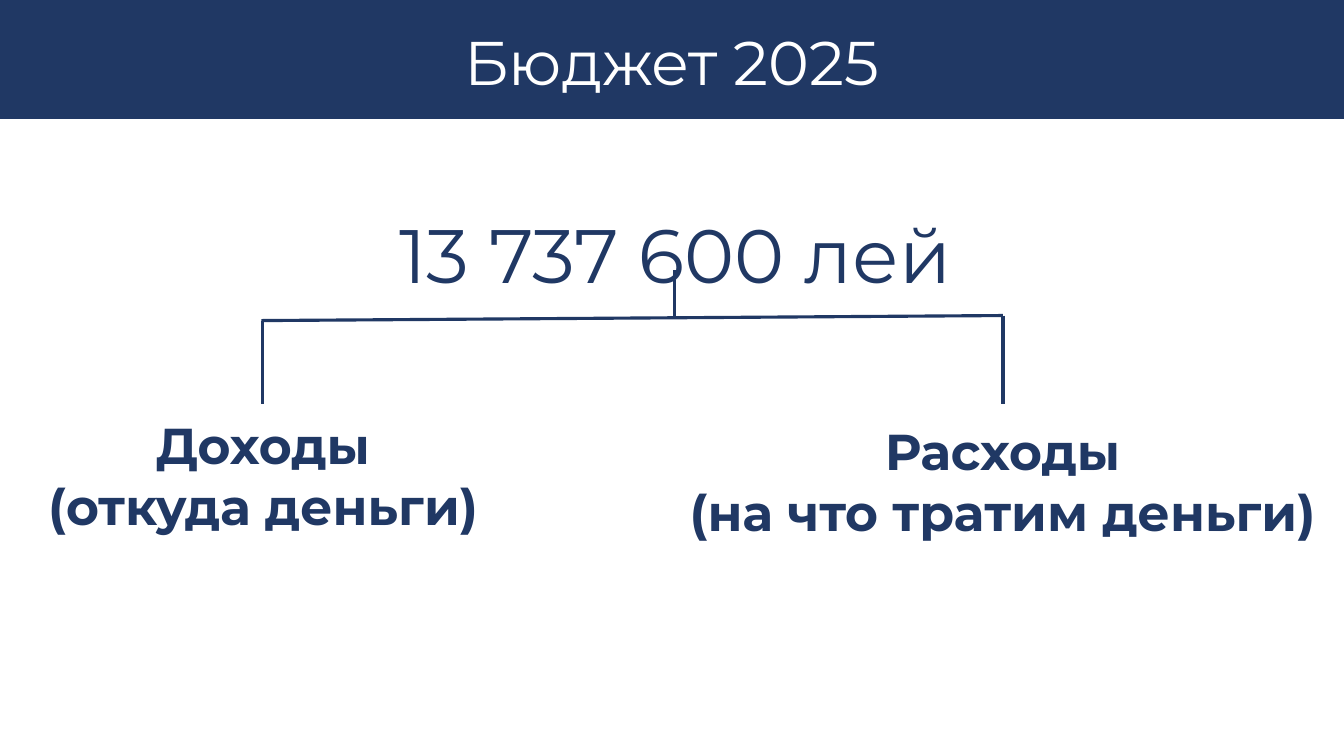
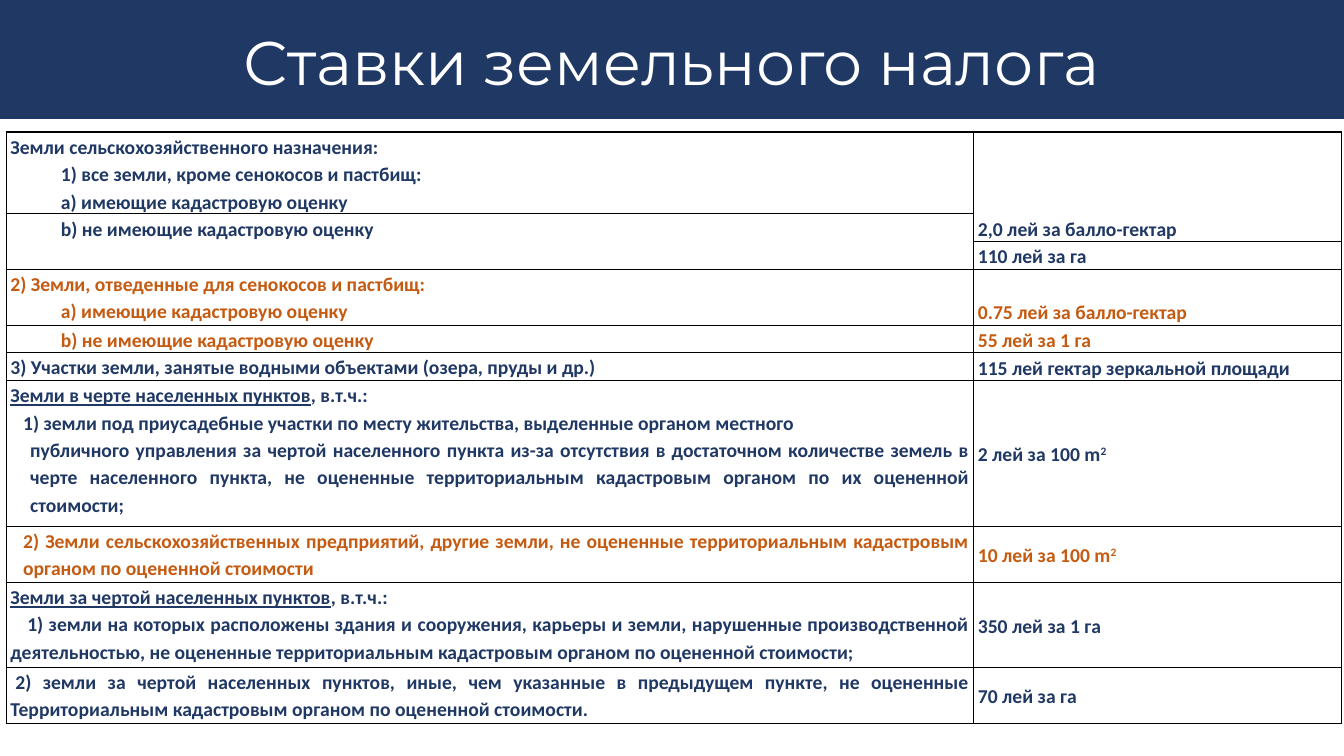
from dataclasses import dataclass
from lxml.etree import SubElement
from pptx import Presentation
from pptx.dml.color import RGBColor
from pptx.enum.shapes import MSO_CONNECTOR as Connector, MSO_SHAPE as Shape
from pptx.enum.text import MSO_ANCHOR as Anchor, PP_ALIGN as Align
from pptx.oxml import parse_xml
from pptx.oxml.ns import nsdecls, qn
from pptx.util import Pt


@dataclass(frozen=True)
class Theme:
    navy: RGBColor = RGBColor(0x20, 0x38, 0x64)
    orange: RGBColor = RGBColor(0xC5, 0x5A, 0x11)
    white: RGBColor = RGBColor(0xFF, 0xFF, 0xFF)
    border: str = "000000"
    display_font: str = "Montserrat"
    table_font: str = "Calibri"
    title_size: int = 44
    amount_size: int = 54
    label_size: int = 36
    table_size: int = 14
    table_spacing: float = 1.15
    line_width: float = 2.25


@dataclass(frozen=True)
class Box:
    left: float
    top: float
    width: float
    height: float

    def inner(self, left, top, width, height):
        return Box(self.left + left, self.top + top, width, height)

    def lengths(self):
        return Pt(self.left), Pt(self.top), Pt(self.width), Pt(self.height)


@dataclass(frozen=True)
class Line:
    text: str
    indent: float = 0
    first: float = 0
    heading: str = ""
    power: str = ""


@dataclass(frozen=True)
class Rate:
    height: float
    lines: tuple = ()
    value: Line = None
    anchor: Anchor = Anchor.MIDDLE
    accent: bool = False


THEME = Theme()
SLIDE = Box(0, 0, 960, 540)
BAND = Box(0, 0, 960, 85)
BODY = Box(0, 85, 960, 455)
COLUMNS = (691, 263)
SUB = 36

RATES = (
    Rate(58.5, (Line("Земли сельскохозяйственного назначения:"),
                Line("1) все земли, кроме сенокосов и пастбищ:", SUB),
                Line("a) имеющие кадастровую оценку", SUB)),
         Line("2,0 лей за балло-гектар"), Anchor.BOTTOM),
    Rate(19.75, (Line("b) не имеющие кадастровую оценку", SUB),)),
    Rate(19.75, (), Line("110 лей за га")),
    Rate(40, (Line("2) Земли, отведенные для сенокосов и пастбищ:"),
              Line("a) имеющие кадастровую оценку", SUB)),
         Line("0.75 лей за балло-гектар"), Anchor.BOTTOM, True),
    Rate(19.75, (Line("b) не имеющие кадастровую оценку", SUB),),
         Line("55 лей за 1 га"), accent=True),
    Rate(19.75, (Line("3) Участки земли, занятые водными объектами (озера, пруды и др.)"),),
         Line("115 лей гектар зеркальной площади")),
    Rate(104.25, (Line(", в.т.ч.:", heading="Земли в черте населенных пунктов"),
                  Line("1) земли под приусадебные участки по месту жительства, "
                       "выделенные органом местного", 9),
                  Line("публичного управления за чертой населенного пункта из-за "
                       "отсутствия в достаточном количестве земель в черте населенного "
                       "пункта, не оцененные территориальным кадастровым органом по их "
                       "оцененной стоимости;", 14)),
         Line("2 лей за 100 m", power="2")),
    Rate(40, (Line("2) Земли сельскохозяйственных предприятий, другие земли, не "
                   "оцененные территориальным кадастровым органом по оцененной "
                   "стоимости", 9),),
         Line("10 лей за 100 m", power="2"), accent=True),
    Rate(60.75, (Line(", в.т.ч.:", heading="Земли за чертой населенных пунктов"),
                 Line("1) земли на которых расположены здания и сооружения, карьеры и "
                      "земли, нарушенные производственной деятельностью, не оцененные "
                      "территориальным кадастровым органом по оцененной стоимости;",
                      first=12)),
         Line("350 лей за 1 га")),
    Rate(40, (Line("2) земли за чертой населенных пунктов, иные, чем указанные в "
                   "предыдущем пункте, не оцененные Территориальным кадастровым "
                   "органом по оцененной стоимости.", first=3.5),),
         Line("70 лей за га")),
)
MERGES = (((0, 1), (1, 1)), ((1, 0), (2, 0)))


def add_span(para, text, font, size, color, bold=False):
    span = para.add_run()
    span.text = text
    span.font.name = font
    span.font.size = Pt(size)
    span.font.bold = bold
    span.font.color.rgb = color
    return span


def add_label(page, box, lines, size, color, bold=False, wrap=True,
              anchor=Anchor.TOP, spacing=1.0):
    frame = page.shapes.add_textbox(*box.lengths()).text_frame
    frame.word_wrap = wrap
    frame.vertical_anchor = anchor
    for index, text in enumerate(lines):
        para = frame.add_paragraph() if index else frame.paragraphs[0]
        para.alignment = Align.CENTER
        para.line_spacing = spacing
        add_span(para, text, THEME.display_font, size, color, bold)


def add_title_band(page, box, title):
    band = page.shapes.add_shape(Shape.RECTANGLE, *box.lengths())
    band.shadow.inherit = False
    band.fill.solid()
    band.fill.fore_color.rgb = THEME.navy
    band.line.fill.background()
    add_label(page, box.inner(12, 18, 936, 58), [title], THEME.title_size,
              THEME.white, anchor=Anchor.MIDDLE, spacing=0.9)


def add_bracket(page, box, drop, stem, stem_bottom):
    right, bottom = box.left + box.width, box.top + box.height
    arm = box.top + drop
    middle = box.left + stem
    ends = (
        (box.left, arm + 3.6, box.left, bottom),
        (right, arm, right, bottom),
        (box.left - 0.5, arm + 3.6, right, arm),
        (middle, box.top, middle, box.top + stem_bottom),
    )
    for points in ends:
        line = page.shapes.add_connector(Connector.STRAIGHT, *map(Pt, points))
        line.line.color.rgb = THEME.navy
        line.line.width = Pt(THEME.line_width)
        SubElement(line._element.spPr, qn("a:effectLst"))


def add_budget_tree(page, box):
    add_label(page, box.inner(230.4, 59.7, 504, 72.7), ["13 737 600 лей"],
              THEME.amount_size, THEME.navy)
    add_label(page, box.inner(21.6, 207.3, 332.6, 94.3),
              ["Доходы", "(откуда деньги)"], THEME.label_size, THEME.navy,
              bold=True, wrap=False)
    add_label(page, box.inner(476, 211.6, 480.2, 94.3),
              ["Расходы", "(на что тратим деньги)"], THEME.label_size, THEME.navy,
              bold=True)
    add_bracket(page, box.inner(187.2, 108, 529.2, 95.7), 32.4, 294.6, 34.5)


def style_cell(cell):
    cell.margin_left = cell.margin_right = Pt(3)
    cell.margin_top = cell.margin_bottom = 0
    cell.fill.solid()
    cell.fill.fore_color.rgb = THEME.white
    properties = cell._tc.get_or_add_tcPr()
    for index, side in enumerate("LRTB"):
        properties.insert(index, parse_xml(
            f'<a:ln{side} {nsdecls("a")} w="12700"><a:solidFill>'
            f'<a:srgbClr val="{THEME.border}"/></a:solidFill></a:ln{side}>'))


def fill_cell(cell, lines, color, anchor):
    cell.vertical_anchor = anchor
    frame = cell.text_frame
    for index, line in enumerate(lines):
        para = frame.add_paragraph() if index else frame.paragraphs[0]
        para.alignment = Align.JUSTIFY
        para.line_spacing = THEME.table_spacing
        properties = para._p.get_or_add_pPr()
        properties.set("marL", str(Pt(line.indent)))
        properties.set("indent", str(Pt(line.first)))
        style = (THEME.table_font, THEME.table_size, color, True)
        if line.heading:
            add_span(para, line.heading, *style).font.underline = True
        add_span(para, line.text, *style)
        if line.power:
            power = add_span(para, line.power, *style)
            power._r.get_or_add_rPr().set("baseline", "30000")


def add_rate_table(page, box):
    table = page.shapes.add_table(len(RATES), len(COLUMNS), *box.lengths()).table
    table.first_row = table.horz_banding = False
    for column, width in zip(table.columns, COLUMNS):
        column.width = Pt(width)
    for cell in table.iter_cells():
        style_cell(cell)
        cell.text_frame.paragraphs[0].font.size = Pt(THEME.table_size)
    for start, end in MERGES:
        table.cell(*start).merge(table.cell(*end))
    for index, rate in enumerate(RATES):
        table.rows[index].height = Pt(rate.height)
        color = THEME.orange if rate.accent else THEME.navy
        if rate.lines:
            fill_cell(table.cell(index, 0), rate.lines, color, Anchor.TOP)
        if rate.value:
            fill_cell(table.cell(index, 1), [rate.value], color, rate.anchor)


def add_page(deck, title):
    page = deck.slides.add_slide(deck.slide_layouts[6])
    add_title_band(page, BAND, title)
    return page


def main():
    deck = Presentation()
    deck.slide_width, deck.slide_height = Pt(SLIDE.width), Pt(SLIDE.height)
    add_budget_tree(add_page(deck, "Бюджет 2025"), BODY)
    height = sum(rate.height for rate in RATES)
    add_rate_table(add_page(deck, "Ставки земельного налога"),
                   BODY.inner(4.5, 9.3, sum(COLUMNS), height))
    deck.save("out.pptx")


if __name__ == "__main__":
    main()
